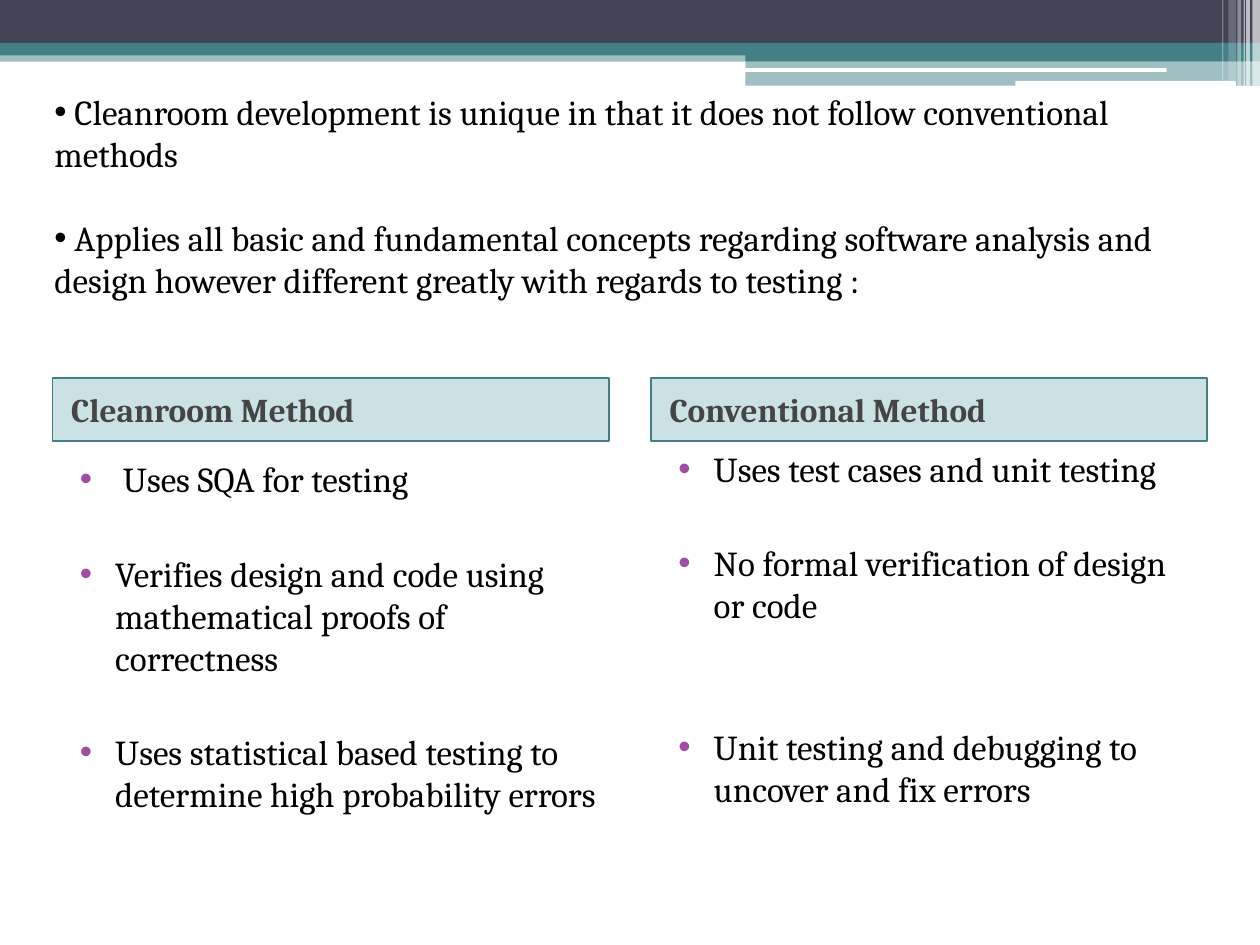
from dataclasses import dataclass

from lxml.etree import SubElement
from pptx import Presentation
from pptx.dml.color import RGBColor
from pptx.enum.shapes import MSO_SHAPE
from pptx.enum.text import MSO_ANCHOR, PP_ALIGN
from pptx.oxml.ns import qn
from pptx.util import Inches, Pt


@dataclass(frozen=True)
class Theme:
    """Colours, type sizes and the grid of the slide."""
    dark: str = "424456"
    teal: str = "438086"
    tint: str = "328E97"
    white: str = "FFFFFF"
    grey: str = "454545"
    black: str = "000000"
    dot: str = "A04DA3"
    font: str = "Cambria"
    head: int = 19
    body: int = 20
    cols: int = 120
    rows: int = 90


T = Theme()
WIDTH, HEIGHT = Inches(10), Inches(7.5)
RECT, ROUND = MSO_SHAPE.RECTANGLE, MSO_SHAPE.ROUNDED_RECTANGLE

BANDS = [
    (RECT, (0, 4.8, 120, 1.08), T.teal, 50),
    (RECT, (0, 0, 120, 4.08), T.dark, 100),
    (RECT, (0, 4.08, 120, 1.2), T.teal, 100),
    (RECT, (71, 4.68, 49, 1.15), T.teal, 100),
    (RECT, (71, 5.8, 49, 2.36), T.teal, 50),
    (ROUND, (70.9, 6.5, 40.2, 0.36), T.white, 100),
    (ROUND, (96.7, 7.7, 21, 0.48), T.white, 100),
]
STRIPES = [
    (119.28, 0.72, 8.16, 65), (118.68, 0.36, 8.16, 65),
    (118.44, 0.12, 8.16, 60), (117.84, 0.36, 8.16, 40),
    (117, 0.72, 7.68, 20), (116.4, 0.12, 7.68, 30),
]
INTRO = [
    (" Cleanroom development is unique in that it does not follow "
     "conventional methods", 0),
    (" Applies all basic and fundamental concepts regarding software "
     "analysis and design however different greatly with regards to "
     "testing :", 24),
]
PANELS = [
    (5, 43, "Cleanroom Method", [
        (" Uses SQA for testing", 3),
        ("Verifies design and code using mathematical proofs of "
         "correctness", 30),
        ("Uses statistical based testing to determine high probability "
         "errors", 30)]),
    (62, 42, "Conventional Method", [
        ("Uses test cases and unit testing", 3),
        ("No formal verification of design or code", 30),
        ("Unit testing and debugging to uncover and fix errors", 57)]),
]


def put(item, **form):
    """Set each format value on the item."""
    for name, value in form.items():
        setattr(item, name, value)


def grid(left, top, width, height):
    """Turn grid columns and rows into slide lengths."""
    col, row = WIDTH / T.cols, HEIGHT / T.rows
    return [round(n) for n in (left * col, top * row, width * col, height * row)]


def block(slide, kind, box, color, alpha=100):
    """Add a flat shape with an opacity in percent."""
    shape = slide.shapes.add_shape(kind, *grid(*box))
    shape.shadow.inherit = False
    shape.fill.solid()
    shape.fill.fore_color.rgb = RGBColor.from_string(color)
    shape.line.fill.background()
    if alpha < 100:
        tone = shape.fill._xPr.find(".//" + qn("a:srgbClr"))
        SubElement(tone, qn("a:alpha"), val=str(alpha * 1000))
    return shape


def write(para, text, size, color, gap=0, bold=False):
    """Write one styled run into a paragraph."""
    put(para, alignment=PP_ALIGN.LEFT, space_before=Pt(gap))
    run = para.add_run()
    run.text = text
    put(run.font, name=T.font, size=Pt(size), bold=bold)
    run.font.color.rgb = RGBColor.from_string(color)


def indent(para, left, first=0):
    """Set the left margin and first-line indent in inches."""
    props = para._p.get_or_add_pPr()
    props.set("marL", str(Inches(left)))
    props.set("indent", str(Inches(first)))
    return props


def bullet(para, color, left, first):
    """Give a paragraph a round bullet."""
    props = indent(para, left, first)
    tone = SubElement(props, qn("a:buClr"))
    SubElement(tone, qn("a:srgbClr"), val=color)
    SubElement(props, qn("a:buFont"), typeface="Arial")
    SubElement(props, qn("a:buChar"), char="•")


def points(slide, box, items, color, left=0, first=0):
    """Add a text box of bulleted items with their gaps."""
    frame = slide.shapes.add_textbox(*grid(*box)).text_frame
    frame.word_wrap = True
    for i, (text, gap) in enumerate(items):
        para = frame.add_paragraph() if i else frame.paragraphs[0]
        write(para, text, T.body, T.black, gap)
        bullet(para, color, left, first)


def header(slide, box, text):
    """Add a tinted heading bar."""
    bar = block(slide, RECT, box, T.tint, 25)
    bar.line.color.rgb = RGBColor.from_string(T.teal)
    bar.line.width = Pt(1)
    put(bar.text_frame, vertical_anchor=MSO_ANCHOR.MIDDLE, word_wrap=True)
    para = bar.text_frame.paragraphs[0]
    write(para, text, T.head, T.grey, 3, True)
    indent(para, 0.05)


def main():
    """Build and save the slide."""
    deck = Presentation()
    put(deck, slide_width=WIDTH, slide_height=HEIGHT)
    slide = deck.slides.add_slide(deck.slide_layouts[6])
    for band in BANDS:
        block(slide, *band)
    for left, width, height, alpha in STRIPES:
        block(slide, RECT, (left, 0, width, height), T.white, alpha)
    for left, top, title, items in PANELS:
        header(slide, (left, 36, 53, 6), title)
        points(slide, (left, top, 53, 51), items, T.dot, 0.4, -0.28)
    points(slide, (4, 8, 112, 21.4), INTRO, T.black)
    deck.save("out.pptx")


if __name__ == "__main__":
    main()
